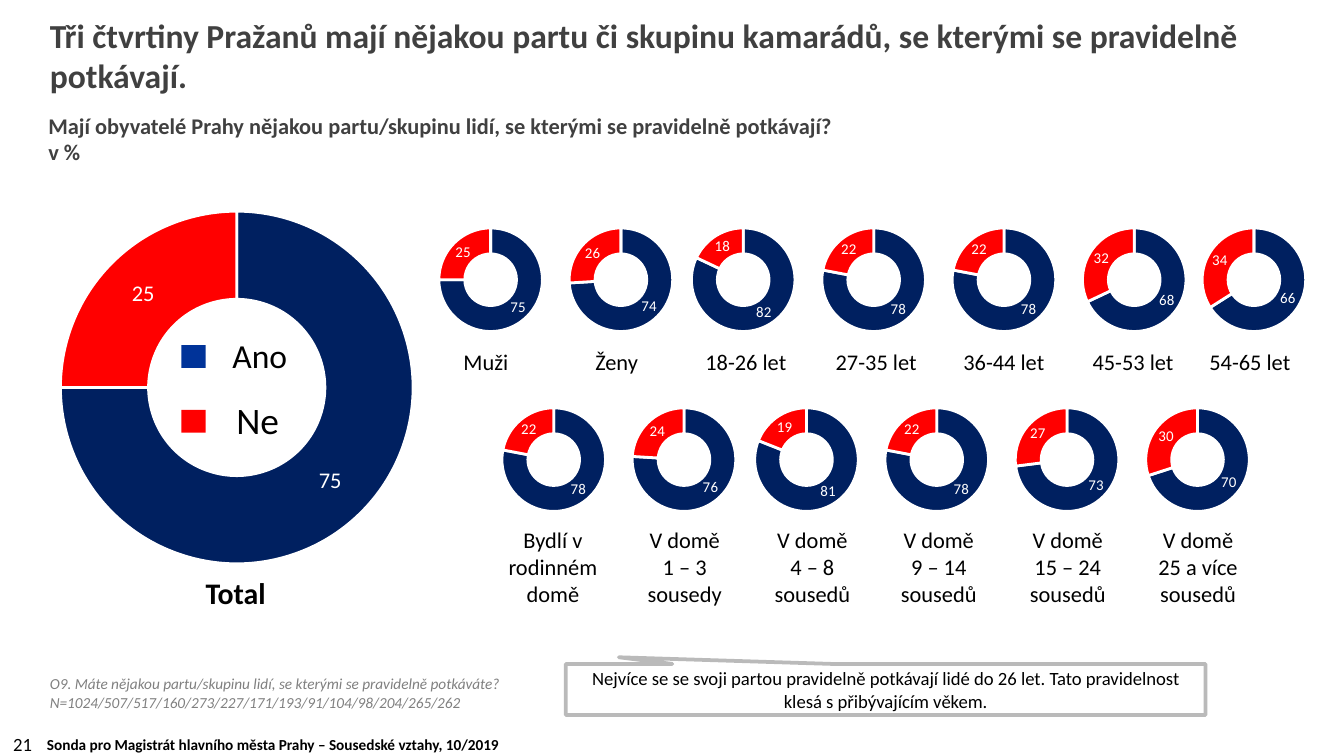
from dataclasses import dataclass
from typing import Any

import lxml.etree
import pptx
import pptx.chart.data
import pptx.dml.color
import pptx.enum.chart
import pptx.enum.shapes
import pptx.enum.text
import pptx.oxml.ns
import pptx.util

Pt = pptx.util.Pt
Align = pptx.enum.text.PP_ALIGN
FONT = "Calibri"
NAVY, BLUE, RED = "002060", "003399", "FF0000"
BLACK, WHITE, DARK, GREY, SILVER = "000000", "FFFFFF", "404040", "808080", "BABABA"
INDENT = 13.7
PLOT_AREA = {"x": 0.199, "y": 0.049, "w": 0.653, "h": 0.85}
HOLE_SIZE = 55


@dataclass
class Label:
    text: str
    left: float
    top: float
    width: float
    height: float
    size: float
    color: str = BLACK
    bold: bool = False
    italic: bool = False
    align: Any = Align.LEFT
    insets: tuple[float, float, float, float] = (7.2, 3.6, 7.2, 3.6)
    indent: float = 0
    line_spacing: float = 0


@dataclass
class Ring:
    left: float
    top: float
    width: float
    height: float
    yes: int
    size: float


@dataclass
class Group:
    name: str
    yes: int
    ring_left: float
    label_left: float


AGE_AND_SEX = [
    Group("Muži", 75, 218.2, 241.2),
    Group("Ženy", 74, 288, 311.8),
    Group("18-26 let", 82, 353.5, 370.8),
    Group("27-35 let", 78, 423.4, 440.6),
    Group("36-44 let", 78, 493.2, 509),
    Group("45-53 let", 68, 563, 578.2),
    Group("54-65 let", 66, 627.1, 640.8),
]
HOUSING = [
    Group("Bydlí v\vrodinném\vdomě", 78, 252, 249.8),
    Group("V domě\v1 – 3\vsousedy", 76, 321.8, 320.4),
    Group("V domě\v4 – 8\vsousedů", 81, 387.4, 388.8),
    Group("V domě\v9 – 14\vsousedů", 78, 457.2, 456.5),
    Group("V domě\v15 – 24\vsousedů", 73, 527, 525.6),
    Group("V domě\v25 a více\vsousedů", 70, 596.9, 595.4),
]
LABELS = [
    Label("Sonda pro Magistrát hlavního města Prahy – Sousedské vztahy, 10/2019",
          20.2, 391, 304, 18, 8.2, bold=True, insets=(5, 2.9, 5, 2.9)),
    Label("O9. Máte nějakou partu/skupinu lidí, se kterými se pravidelně potkáváte?\n"
          "N=1024/507/517/160/273/227/171/193/91/104/98/204/265/262",
          23.8, 361.4, 658, 23, 8.2, GREY, italic=True, insets=(2.9, 0, 2.9, 2.9)),
    Label("Mají obyvatelé Prahy nějakou partu/skupinu lidí, "
          "se kterými se pravidelně potkávají?\nv %",
          25.9, 60.5, 428, 28, 12, DARK, bold=True, insets=(0, 0, 0, 0), line_spacing=14),
    Label("Tři čtvrtiny Pražanů mají nějakou partu či skupinu kamarádů, "
          "se kterými se pravidelně potkávají.",
          23.8, 4.3, 690.5, 36.7, 18, DARK, bold=True, insets=(2.9, 3.6, 2.9, 3.6)),
    Label("Total", 103, 304.6, 70, 26.6, 16, bold=True),
    Label("Ano", 117.4, 175.7, 50, 28.8, 18),
    Label("Ne", 119.5, 209.5, 42, 31.7, 20),
    Label("21", 0, 388.8, 168, 15, 10),
]


def rgb(color: str) -> pptx.dml.color.RGBColor:
    return pptx.dml.color.RGBColor.from_string(color)


def write_text(box: Any, label: Label) -> None:
    frame = box.text_frame
    frame.word_wrap = True
    frame.margin_left, frame.margin_top, frame.margin_right, frame.margin_bottom = map(
        Pt, label.insets)
    frame.text = label.text
    for para in frame.paragraphs:
        para.alignment = label.align
        if label.indent:
            para._p.get_or_add_pPr().set("marL", str(Pt(label.indent)))
        if label.line_spacing:
            para.line_spacing = Pt(label.line_spacing)
        font = para.font
        font.name, font.size = FONT, Pt(label.size)
        font.bold, font.italic = label.bold, label.italic
        font.color.rgb = rgb(label.color)


def add_label(page: Any, label: Label) -> None:
    box = page.shapes.add_textbox(
        Pt(label.left), Pt(label.top), Pt(label.width), Pt(label.height))
    write_text(box, label)


def set_layout(chart: Any) -> None:
    qn = pptx.oxml.ns.qn
    plot_area = chart._chartSpace.find(".//" + qn("c:plotArea"))
    layout = plot_area.find(qn("c:layout"))
    if layout is None:
        layout = lxml.etree.Element(qn("c:layout"))
        plot_area.insert(0, layout)
    manual = lxml.etree.SubElement(layout, qn("c:manualLayout"))
    settings = {"layoutTarget": "inner", "xMode": "edge", "yMode": "edge", **PLOT_AREA}
    for name, value in settings.items():
        lxml.etree.SubElement(manual, qn("c:" + name)).set("val", str(value))
    plot_area.find(".//" + qn("c:holeSize")).set("val", str(HOLE_SIZE))


def add_ring(page: Any, ring: Ring) -> None:
    data = pptx.chart.data.CategoryChartData()
    data.categories = ["1", "2"]
    data.add_series("Series 1", [ring.yes, 100 - ring.yes])
    chart = page.shapes.add_chart(
        pptx.enum.chart.XL_CHART_TYPE.DOUGHNUT,
        Pt(ring.left), Pt(ring.top), Pt(ring.width), Pt(ring.height), data).chart
    chart.has_legend = False
    chart.has_title = False
    chart.font.name, chart.font.size = FONT, Pt(10)
    chart.font.color.rgb = rgb(BLUE)
    plot = chart.plots[0]
    plot.vary_by_categories = True
    series = plot.series[0]
    for index, color in enumerate((NAVY, RED)):
        style = series.points[index].format
        style.fill.solid()
        style.fill.fore_color.rgb = rgb(color)
        style.line.color.rgb = rgb(WHITE)
        style.line.width = Pt(1.5)
    labels = series.data_labels
    labels.show_value = True
    labels.font.name, labels.font.size = FONT, Pt(ring.size)
    labels.font.color.rgb = rgb(WHITE)
    set_layout(chart)


def add_groups(page: Any, groups: list[Group], ring_top: float, label_top: float,
               width: float, height: float, align: Any, indent: float) -> None:
    for group in groups:
        add_ring(page, Ring(group.ring_left, ring_top, 85, 91.4, group.yes, 8))
        add_label(page, Label(group.name, group.label_left, label_top, width, height,
                              12, align=align, indent=indent))


def add_legend_key(page: Any, top: float, color: str) -> None:
    key = page.shapes.add_shape(
        pptx.enum.shapes.MSO_SHAPE.RECTANGLE, Pt(97.2), Pt(top), Pt(13), Pt(12.2))
    key.shadow.inherit = False
    key.fill.solid()
    key.fill.fore_color.rgb = rgb(color)
    key.line.fill.background()


def add_callout(page: Any, label: Label) -> None:
    callout = page.shapes.add_shape(
        pptx.enum.shapes.MSO_SHAPE.RECTANGULAR_CALLOUT,
        Pt(label.left), Pt(label.top), Pt(label.width), Pt(label.height))
    callout.shadow.inherit = False
    callout.adjustments[0], callout.adjustments[1] = -0.417, -0.631
    callout.fill.background()
    callout.line.color.rgb = rgb(SILVER)
    callout.line.width = Pt(2)
    write_text(callout, label)
    callout.text_frame.vertical_anchor = pptx.enum.text.MSO_ANCHOR.MIDDLE


def main() -> None:
    deck = pptx.Presentation()
    deck.slide_width, deck.slide_height = Pt(720), Pt(405)
    page = deck.slides.add_slide(deck.slide_layouts[6])
    add_ring(page, Ring(-25.2, 102.2, 289.4, 222.5, 75, 12))
    add_groups(page, AGE_AND_SEX, 106.6, 182.9, 70, 21.6, Align.LEFT, 0)
    add_groups(page, HOUSING, 203, 278.4, 79.2, 51, Align.CENTER, INDENT)
    add_legend_key(page, 185, BLUE)
    add_legend_key(page, 219.6, RED)
    for label in LABELS:
        add_label(page, label)
    add_callout(page, Label(
        "Nejvíce se se svoji partou pravidelně potkávají lidé do 26 let. "
        "Tato pravidelnost klesá s přibývajícím věkem.",
        303.1, 355.7, 342.7, 27.4, 10, align=Align.CENTER))
    deck.save("out.pptx")


if __name__ == "__main__":
    main()
